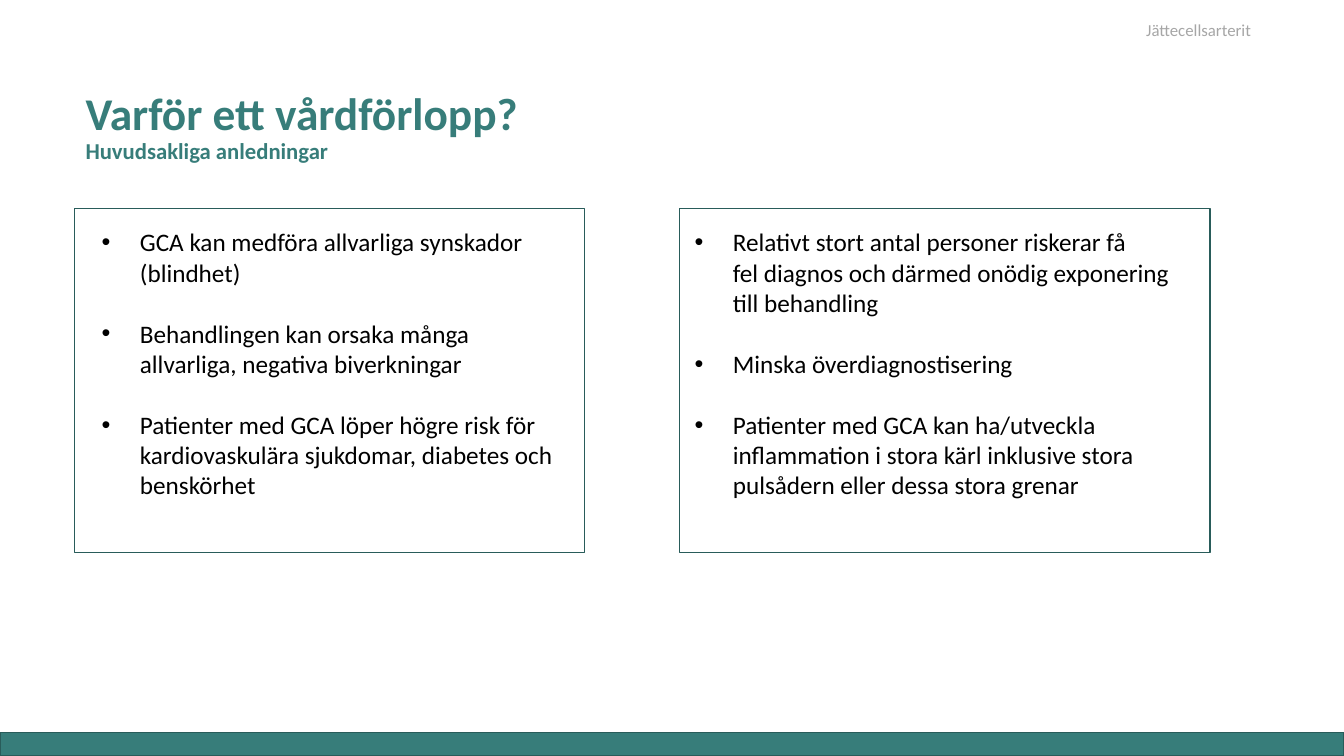
from lxml.etree import SubElement
from pptx import Presentation
from pptx.dml.color import RGBColor
from pptx.enum.shapes import MSO_SHAPE
from pptx.enum.text import MSO_ANCHOR
from pptx.oxml.ns import qn
from pptx.util import Inches, Pt

TEAL, DARK, GREY, BLACK = "377D7A", "295C5A", "A6A6A6", "000000"


def color(code):
    return RGBColor.from_string(code)


class Deck:
    face = "Calibri"

    def __init__(self, slide):
        self.shapes = slide.shapes

    def rect(self, left, top, width, height, fill=None):
        box = self.shapes.add_shape(
            MSO_SHAPE.RECTANGLE, *map(Inches, (left, top, width, height)))
        box.shadow.inherit = False
        if fill:
            box.fill.solid()
            box.fill.fore_color.rgb = color(fill)
        else:
            box.fill.background()
        box.line.color.rgb = color(DARK)
        box.line.width = Pt(1)

    def text(self, place, lines, sizes, tint=BLACK, bold=False,
             space=None, anchor=MSO_ANCHOR.TOP, bullet=False):
        """Add a text box with one paragraph per line; sizes pair with lines."""
        box = self.shapes.add_textbox(*map(Inches, place))
        frame = box.text_frame
        frame.word_wrap = True
        frame.vertical_anchor = anchor
        for i, (line, size) in enumerate(zip(lines, sizes)):
            para = frame.paragraphs[0] if i == 0 else frame.add_paragraph()
            para.text = line
            if bullet:
                self.bullet(para)
                if i:
                    para.space_before = Pt(22)
            if space:
                para.line_spacing = space
            font = para.font
            font.name, font.size, font.bold = self.face, Pt(size), bold
            font.color.rgb = color(tint)

    def bullet(self, para):
        props = para._p.get_or_add_pPr()
        props.set("marL", str(Inches(0.38)))
        props.set("indent", str(-Inches(0.38)))
        SubElement(props, qn("a:buFont"), typeface="Arial")
        SubElement(props, qn("a:buChar"), char="•")


def main():
    show = Presentation()
    show.slide_width, show.slide_height = Inches(13.33), Inches(7.5)
    deck = Deck(show.slides.add_slide(show.slide_layouts[6]))

    deck.rect(0, 7.27, 13.33, 0.23, TEAL)
    deck.text((0.75, 1.01, 10, 0.67),
              ["Varför ett vårdförlopp?", "Huvudsakliga anledningar"],
              [32.4, 16.2], TEAL, bold=True, space=0.9, anchor=MSO_ANCHOR.BOTTOM)
    deck.text((11.27, 0.15, 1.7, 0.3), ["Jättecellsarterit"], [12], GREY)

    harms = [
        "GCA kan medföra allvarliga synskador (blindhet)",
        "Behandlingen kan orsaka många allvarliga, negativa biverkningar",
        "Patienter med GCA löper högre risk för kardiovaskulära sjukdomar, "
        "diabetes och benskörhet",
    ]
    needs = [
        "Relativt stort antal personer riskerar få\v"
        "fel diagnos och därmed onödig exponering\vtill behandling",
        "Minska överdiagnostisering",
        "Patienter med GCA kan ha/utveckla inflammation i stora kärl "
        "inklusive stora pulsådern eller dessa stora grenar",
    ]
    for left, width, inner, room, points in (
            (0.74, 5.06, 0.91, 4.83, harms), (6.74, 5.26, 6.79, 5.05, needs)):
        deck.rect(left, 2.07, width, 3.41)
        deck.text((inner, 2.2, room, 3.13), points, [18] * 3, bullet=True)

    show.save("out.pptx")


if __name__ == "__main__":
    main()
